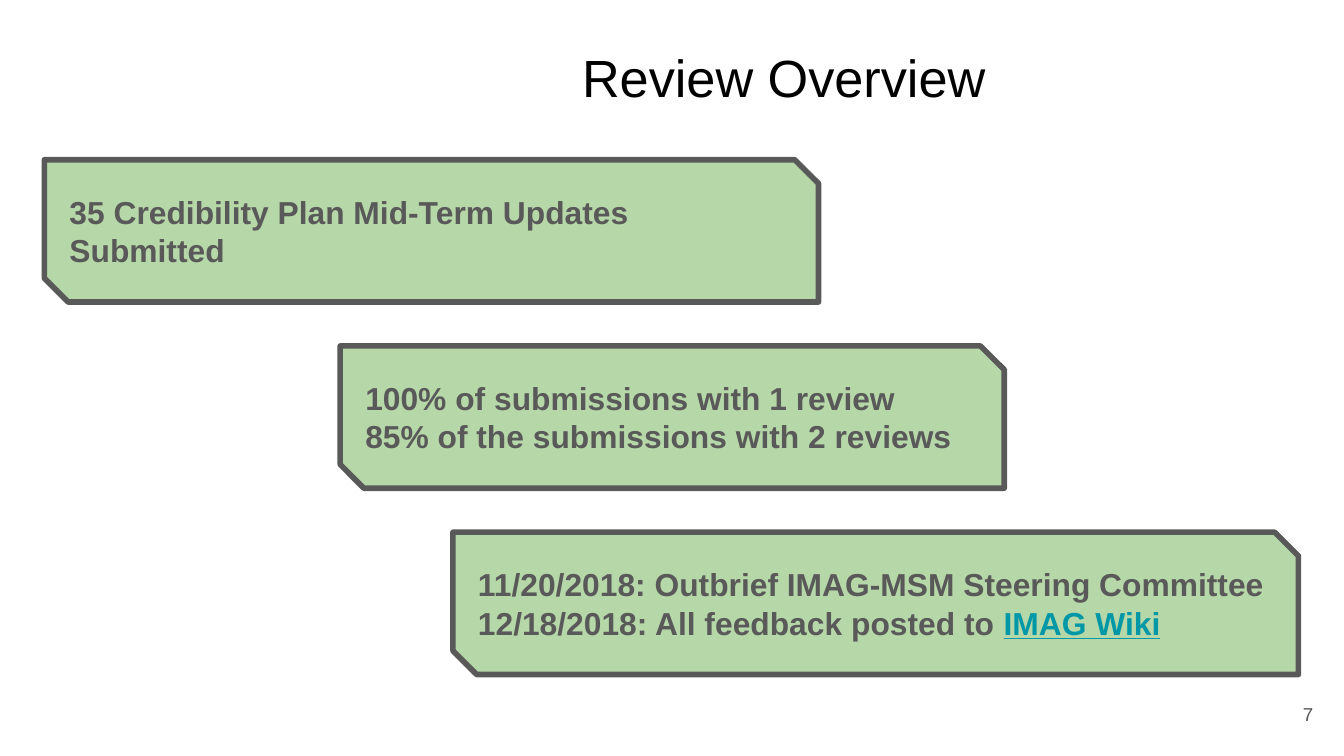
from pptx import Presentation
from pptx.dml.color import RGBColor
from pptx.enum.shapes import MSO_SHAPE as Shape
from pptx.enum.text import MSO_ANCHOR as Anchor, MSO_AUTO_SIZE as AutoSize, PP_ALIGN as Align
from pptx.util import Cm, Pt

GREY, GREEN, TEAL, BLACK = "595959", "B6D7A8", "0097A7", "000000"
INSET = 0.25

TITLE = "Review Overview"
PAGE_NUMBER = "7"
STEPS = [
    {"left": 0.84, "width": 14.63, "right_inset": 0.6, "lines": [
        [("35 Credibility Plan Mid-Term Updates Submitted", {})]]},
    {"left": 6.43, "width": 12.55, "right_inset": INSET, "lines": [
        [("100% of submissions with 1 review", {})],
        [("85% of the submissions with 2 reviews", {})]]},
    {"left": 8.56, "width": 15.98, "right_inset": INSET, "lines": [
        [("11/20/2018: Outbrief IMAG-MSM Steering Committee", {})],
        [("12/18/2018: All feedback posted to ", {}),
         ("IMAG Wiki", {"color": TEAL, "underline": True})]]},
]
STEP_TOP, STEP_HEIGHT, STEP_PITCH = 3.02, 2.69, 3.52

TITLE_FONT = {"size": Pt(28), "color": BLACK}
NUMBER_FONT = {"size": Pt(10), "color": GREY}
STEP_FONT = {"size": Pt(17), "color": GREY, "bold": True}


def rgb(value):
    return RGBColor.from_string(value)


def format_font(font, values):
    font.name = "Arial"
    for name, value in values.items():
        if name == "color":
            font.color.rgb = rgb(value)
        else:
            setattr(font, name, value)


def fill_text(box, lines, font, align, anchor, right_inset=INSET):
    frame = box.text_frame
    settings = {
        "word_wrap": True, "auto_size": AutoSize.NONE, "vertical_anchor": anchor,
        "margin_left": Cm(INSET), "margin_top": Cm(INSET),
        "margin_right": Cm(right_inset), "margin_bottom": Cm(INSET),
    }
    for name, value in settings.items():
        setattr(frame, name, value)
    for index, spans in enumerate(lines):
        para = frame.add_paragraph() if index else frame.paragraphs[0]
        para.alignment = align
        for text, changes in spans:
            span = para.add_run()
            span.text = text
            format_font(span.font, {**font, **changes})


def add_step(page, index, step):
    box = page.shapes.add_shape(
        Shape.SNIP_2_DIAG_RECTANGLE, Cm(step["left"]), Cm(STEP_TOP + index * STEP_PITCH),
        Cm(step["width"]), Cm(STEP_HEIGHT))
    box.shadow.inherit = False
    box.adjustments[0], box.adjustments[1] = 0, 0.167
    box.fill.solid()
    box.fill.fore_color.rgb = rgb(GREEN)
    box.line.color.rgb = rgb(GREY)
    box.line.width = Pt(3)
    fill_text(box, step["lines"], STEP_FONT, Align.LEFT, Anchor.MIDDLE, step["right_inset"])


def main():
    deck = Presentation()
    deck.slide_width, deck.slide_height = Cm(25.4), Cm(14.29)
    page = deck.slides.add_slide(deck.slide_layouts[5])

    title = page.shapes.title
    title.left, title.top, title.width, title.height = Cm(5.08), Cm(0.61), Cm(19.46), Cm(1.6)
    fill_text(title, [[(TITLE, {})]], TITLE_FONT, Align.CENTER, Anchor.TOP)

    number = page.shapes.add_textbox(Cm(23.55), Cm(12.95), Cm(1.52), Cm(1.09))
    fill_text(number, [[(PAGE_NUMBER, {})]], NUMBER_FONT, Align.RIGHT, Anchor.MIDDLE)

    for index, step in enumerate(STEPS):
        add_step(page, index, step)

    deck.save("out.pptx")


if __name__ == "__main__":
    main()
